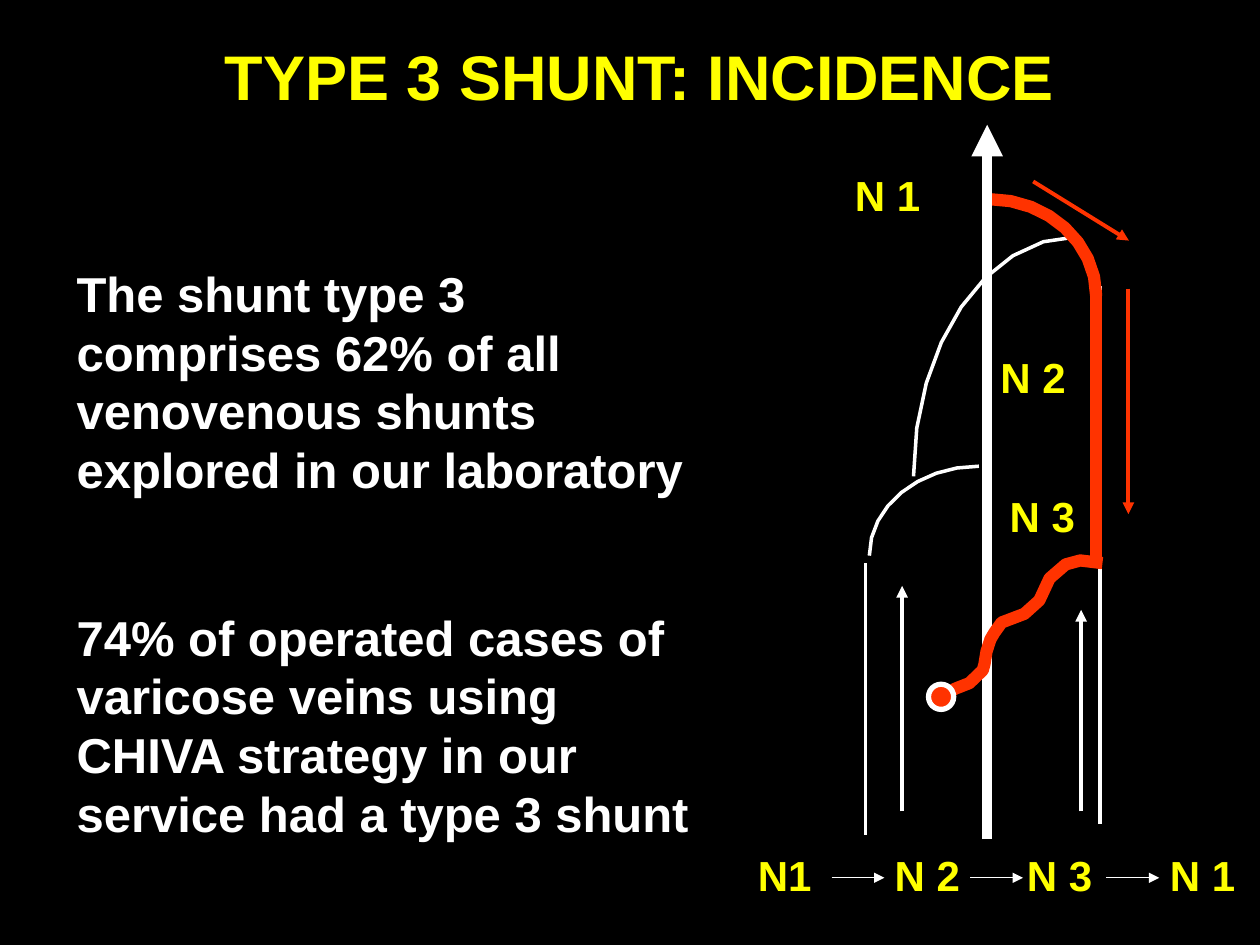
import pptx
import pptx.util
import pptx.dml.color
import pptx.enum.shapes
import pptx.enum.text
import pptx.oxml
import pptx.oxml.ns

Pt = pptx.util.Pt
WHITE, RED, GOLD = "FFFFFF", "FF3300", "FFFF00"


def tint(form, code):
    form.solid()
    form.fore_color.rgb = pptx.dml.color.RGBColor.from_string(code)


def label(box, words, size, code, inset=(0, 0), wrap=False):
    shape = slide.shapes.add_textbox(*[Pt(v) for v in box])
    frame = shape.text_frame
    frame.word_wrap = wrap
    frame.margin_left = frame.margin_right = Pt(inset[0])
    frame.margin_top = frame.margin_bottom = Pt(inset[1])
    for i, line in enumerate(words):
        para = frame.paragraphs[0] if i == 0 else frame.add_paragraph()
        run = para.add_run()
        run.text = line
        run.font.name = "Arial"
        run.font.size = Pt(size)
        run.font.bold = True
        tint(run.font.fill, code)
    return frame


deck = pptx.Presentation()
deck.slide_width, deck.slide_height = Pt(720), Pt(540)
slide = deck.slides.add_slide(deck.slide_layouts[6])
tint(slide.background.fill, "000000")

title = label((59.6, 3.6, 612, 78.5), ["TYPE 3 SHUNT: INCIDENCE"], 36, GOLD, (7.2, 3.6), True)
title.vertical_anchor = pptx.enum.text.MSO_ANCHOR.MIDDLE
title.paragraphs[0].alignment = pptx.enum.text.PP_ALIGN.CENTER

body = label((36.7, 146.9, 368.6, 343.4), [
    "The shunt type 3 comprises 62% of all venovenous shunts explored in our laboratory",
    "74% of operated cases of varicose veins using CHIVA strategy in our service had a type 3 shunt",
], 28, WHITE, (7.2, 3.6), True)
body.paragraphs[1].space_before = Pt(62)

strokes = [
    (WHITE, 2, 8, [(496.8, 317.5), (496.8, 289.4), (524.9, 266.4), (559.4, 266.4)]),
    (628.6, 163.4, 628.6, 470.9, WHITE, 2, False),
    (WHITE, 2, 8, [(522, 272.2), (522, 196.6), (563.8, 135.4), (614.9, 135.4)]),
    (RED, 7, 8, [(565.2, 113.8), (599, 113.8), (626.4, 139), (626.4, 169.2)]),
    (626.4, 165.6, 626.4, 321.1, RED, 7, False),
    (564.1, 479.5, 564.1, 71.3, WHITE, 6, True),
    (590.4, 103.7, 645.1, 137.5, RED, 2.25, True),
    (644.8, 164.9, 644.8, 293.8, RED, 2.25, True),
    (617.8, 463.7, 617.8, 348.5, WHITE, 2.25, True),
    (515.5, 463.7, 515.5, 334.8, WHITE, 2.25, True),
    (RED, 7, 3, [
        (630, 321.8), (613.4, 319), (611.3, 319), (599.8, 330.5),
        (594.7, 346.3), (588.2, 351.4), (572.4, 355.7),
        (566.6, 364.3), (566.6, 362.2), (563.8, 372.2),
        (563, 375.8), (563, 379.4), (561.6, 383),
        (554.4, 394.6), (545.8, 390.2), (536.4, 399.6),
    ]),
    (494.6, 321.8, 494.6, 477.4, WHITE, 2, False),
]
for x in (475.2, 554.4, 632.2):
    strokes.append((x, 501.6, x + 30.2, 501.6, WHITE, 0.75, True))

for item in strokes:
    if len(item) == 4:
        code, width, steps, knots = item
        spots = []
        for k in range(0, len(knots) - 1, 3):
            a, b, c, d = knots[k:k + 4]
            for n in range(1, steps + 1):
                t = n / steps
                u = 1 - t
                spots.append([
                    Pt(u**3 * a[i] + 3 * u * u * t * b[i] + 3 * u * t * t * c[i] + t**3 * d[i])
                    for i in (0, 1)
                ])
        pen = slide.shapes.build_freeform(Pt(knots[0][0]), Pt(knots[0][1]))
        pen.add_line_segments(spots, close=False)
        curve = pen.convert_to_shape()
        curve.shadow.inherit = False
        curve.fill.background()
        tint(curve.line.fill, code)
        curve.line.width = Pt(width)
    else:
        *ends, code, width, head = item
        line = slide.shapes.add_connector(
            pptx.enum.shapes.MSO_CONNECTOR.STRAIGHT, *[Pt(v) for v in ends])
        tint(line.line.fill, code)
        line.line.width = Pt(width)
        props = line._element.spPr
        if head:
            tip = pptx.oxml.parse_xml(
                '<a:tailEnd %s type="triangle"/>' % pptx.oxml.ns.nsdecls("a"))
            props.find(pptx.oxml.ns.qn("a:ln")).append(tip)
        props.append(pptx.oxml.parse_xml("<a:effectLst %s/>" % pptx.oxml.ns.nsdecls("a")))

dot = slide.shapes.add_shape(
    pptx.enum.shapes.MSO_SHAPE.OVAL, Pt(530.6), Pt(391), Pt(14.4), Pt(14.4))
dot.shadow.inherit = False
tint(dot.fill, RED)
tint(dot.line.fill, WHITE)
dot.line.width = Pt(3)

for x, y, wide, word in [
    (571.7, 200.9, 37.4, "N 2"),
    (488.5, 97, 37.4, "N 1"),
    (577, 280.1, 37.4, "N 3"),
    (433.1, 485.3, 31, "N1"),
    (511.2, 485.3, 37.4, "N 2"),
    (586.8, 485.3, 37.4, "N 3"),
    (668.5, 485.3, 37.4, "N 1"),
]:
    label((x, y, wide, 28.8), [word], 24, GOLD)

deck.save("out.pptx")
